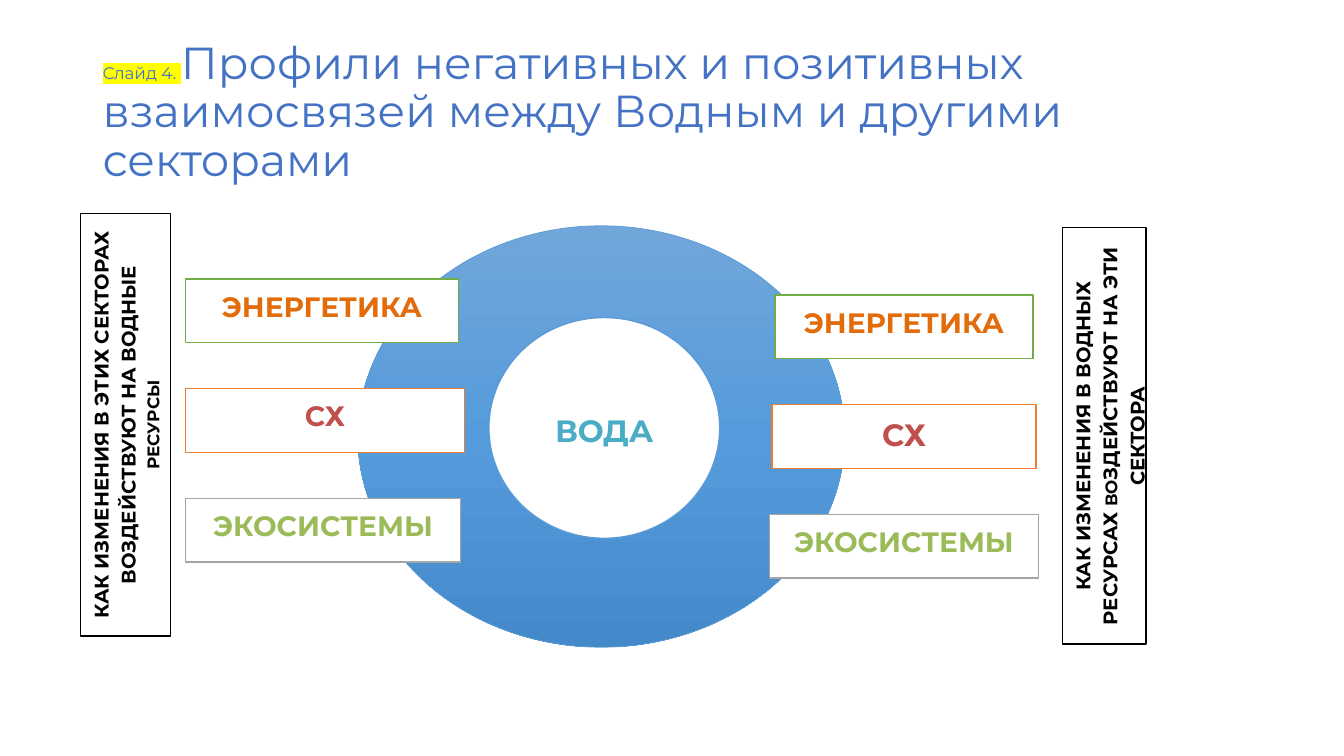
from copy import deepcopy

from lxml import etree
from pptx import Presentation
from pptx.dml.color import RGBColor
from pptx.enum.shapes import MSO_SHAPE
from pptx.enum.text import MSO_ANCHOR, PP_ALIGN
from pptx.oxml.ns import qn
from pptx.util import Pt

RECTANGLE, OVAL = MSO_SHAPE.RECTANGLE, MSO_SHAPE.OVAL
MIDDLE, TOP = MSO_ANCHOR.MIDDLE, MSO_ANCHOR.TOP
CENTER = PP_ALIGN.CENTER
FONT = "Montserrat"

COLORS = {
    "title": "4472C4", "highlight": "FFFF00", "white": "FFFFFF", "black": "000000",
    "ring_top": "71A6DB", "ring_middle": "559BDB", "ring_bottom": "448ACA",
    "ring_line": "5B9BD5", "water": "4BACC6",
    "energy": "E36C0A", "energy_line": "70AD47",
    "farming": "C0504D", "farming_line": "ED7D31",
    "ecosystems": "9BBB59", "ecosystems_line": "A5A5A5",
}

# Runs are (text, size)
TITLE = [("Слайд 4. ", 12),
         ("Профили негативных и позитивных взаимосвязей между Водным и другими секторами", 32)]
WATER = [("ВОДА", 22)]
# Side notes: centre x, centre y, length, thickness, runs
SIDE_NOTES = [
    (89.6, 303.5, 301.7, 64.1,
     [("КАК ИЗМЕНЕНИЯ В ЭТИХ СЕКТОРАХ ВОЗДЕЙСТВУЮТ НА ВОДНЫЕ", 14), (" РЕСУРСЫ", 12)]),
    (788.8, 311.4, 297.4, 59.8,
     [("КАК ИЗМЕНЕНИЯ В ВОДНЫХ РЕСУРСАХ ", 14), ("ВО", 12),
      ("ЗДЕЙСТВУЮТ НА ЭТИ СЕКТОРА", 14)]),
]
# Sectors: name, colour, left width, left size, right width, right size
SECTORS = [
    ("ЭНЕРГЕТИКА", "energy", 195.1, 20, 184.3, 20),
    ("СХ", "farming", 199.4, 20, 188.6, 22),
    ("ЭКОСИСТЕМЫ", "ecosystems", 196.6, 20, 192.2, 20),
]
LEFT_EDGE, LEFT_TOP = 132.5, 199.4
RIGHT_CENTER, RIGHT_TOP = 645.8, 210.8
SECTOR_HEIGHT, SECTOR_PITCH = 45.5, 78.3


def rgb(name):
    return RGBColor.from_string(COLORS[name])


def write(box, runs, color, bold=True, anchor=TOP):
    frame = box.text_frame
    frame.word_wrap = True
    frame.vertical_anchor = anchor
    para = frame.paragraphs[0]
    for text, size in runs:
        span = para.add_run()
        span.text = text
        span.font.size = Pt(size)
        span.font.name = FONT
        span.font.bold = bold
        span.font.color.rgb = rgb(color)
    return para


def add_figure(page, kind, left, top, width, height, line, weight=1):
    figure = page.shapes.add_shape(kind, Pt(left), Pt(top), Pt(width), Pt(height))
    figure.shadow.inherit = False
    figure.fill.solid()
    figure.fill.fore_color.rgb = rgb("white")
    figure.line.color.rgb = rgb(line)
    figure.line.width = Pt(weight)
    return figure


def add_label(page, kind, left, top, width, height, line, runs, color, anchor=TOP):
    label = add_figure(page, kind, left, top, width, height, line)
    para = write(label, runs, color, anchor=anchor)
    para.alignment = CENTER
    para.line_spacing = 1.15
    para.space_after = Pt(10)
    return label


def add_title(page):
    box = page.shapes.add_textbox(Pt(66.2), Pt(28.8), Pt(828), Pt(104.4))
    para = write(box, TITLE, "title", bold=False, anchor=MIDDLE)
    para.line_spacing = 0.9
    fill = para.runs[0].font._element.find(qn("a:solidFill"))
    highlight = etree.Element(qn("a:highlight"))
    etree.SubElement(highlight, qn("a:srgbClr")).set("val", COLORS["highlight"])
    fill.addnext(highlight)


def add_ring(page):
    ring = add_figure(page, OVAL, 255.6, 161.3, 347.8, 301, "ring_line", 0.5)
    ring.fill.gradient()
    ring.fill.gradient_angle = 270
    stops = ring._element.spPr.find(".//" + qn("a:gsLst"))
    stops.insert(1, deepcopy(stops[0]))
    names = ("ring_top", "ring_middle", "ring_bottom")
    for index, (stop, name) in enumerate(zip(ring.fill.gradient_stops, names)):
        stop.position = index / 2
        stop.color.rgb = rgb(name)
    add_label(page, OVAL, 349.2, 226.8, 164.9, 157.7, "ring_line", WATER, "water", MIDDLE)


def add_side_notes(page):
    for center_x, center_y, length, thickness, runs in SIDE_NOTES:
        note = add_label(page, RECTANGLE, center_x - length / 2, center_y - thickness / 2,
                         length, thickness, "black", runs, "black")
        note.rotation = 270


def add_sectors(page):
    for row, (name, color, left_width, left_size, right_width, right_size) in enumerate(SECTORS):
        sides = ((LEFT_EDGE, LEFT_TOP, left_width, left_size),
                 (RIGHT_CENTER - right_width / 2, RIGHT_TOP, right_width, right_size))
        for left, top, width, size in sides:
            add_label(page, RECTANGLE, left, top + row * SECTOR_PITCH, width, SECTOR_HEIGHT,
                      color + "_line", [(name, size)], color)


def main():
    deck = Presentation()
    deck.slide_width, deck.slide_height = Pt(960), Pt(540)
    page = deck.slides.add_slide(deck.slide_layouts[6])
    add_title(page)
    add_ring(page)
    add_side_notes(page)
    add_sectors(page)
    deck.save("out.pptx")


if __name__ == "__main__":
    main()
